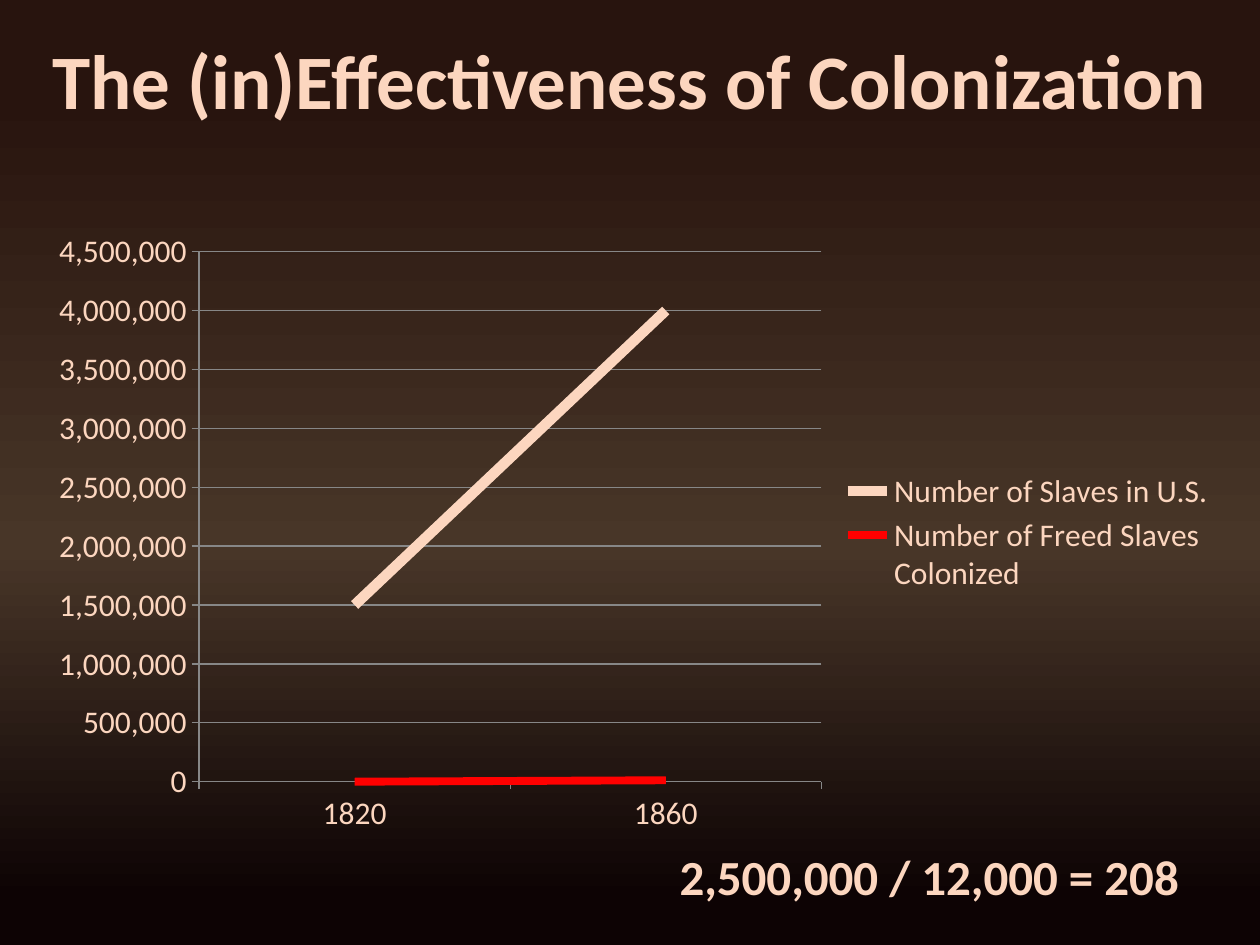
from copy import deepcopy
from dataclasses import dataclass

from lxml import etree
from pptx import Presentation
from pptx.chart.data import CategoryChartData
from pptx.dml.color import RGBColor
from pptx.enum.chart import XL_CHART_TYPE, XL_LEGEND_POSITION, XL_TICK_MARK
from pptx.enum.text import MSO_ANCHOR, MSO_AUTO_SIZE, PP_ALIGN
from pptx.oxml.ns import qn
from pptx.util import Pt

LINE = XL_CHART_TYPE.LINE
LEGEND_RIGHT = XL_LEGEND_POSITION.RIGHT
TICK_OUTSIDE = XL_TICK_MARK.OUTSIDE
MIDDLE = MSO_ANCHOR.MIDDLE
GROW = MSO_AUTO_SIZE.SHAPE_TO_FIT_TEXT
NO_FIT = MSO_AUTO_SIZE.NONE
CENTER = PP_ALIGN.CENTER
TITLE_ONLY = 5


@dataclass(frozen=True)
class Theme:
    font: str = "Calibri"
    text: RGBColor = RGBColor.from_string("FCD6BF")
    accent: RGBColor = RGBColor.from_string("FF0000")
    rule: RGBColor = RGBColor.from_string("878787")
    backdrop: tuple = ((0.10, "28140E"), (0.58, "483628"), (0.95, "0D0304"))
    title_size: int = 44
    result_size: int = 28
    chart_size: int = 18


def assign(target, values):
    for name, value in values.items():
        setattr(target, name, value)


class SlideBuilder:
    def __init__(self, slide, theme):
        self.slide = slide
        self.theme = theme

    def style_font(self, font, size, bold=False):
        assign(font, {"name": self.theme.font, "size": Pt(size), "bold": bold})
        font.color.rgb = self.theme.text

    def style_line(self, line, color, width):
        line.color.rgb = color
        line.width = Pt(width)

    def background(self):
        fill = self.slide.background.fill
        fill.gradient()
        fill.gradient_angle = 270
        stop_list = self.slide.element.find(".//" + qn("a:gsLst"))
        stop_list.insert(1, deepcopy(stop_list[0]))
        for stop, (position, color) in zip(fill.gradient_stops, self.theme.backdrop):
            stop.position = position
            stop.color.rgb = RGBColor.from_string(color)

    def fill_text(self, box, text, size, frame_format):
        frame = box.text_frame
        assign(frame, {"word_wrap": True, **frame_format})
        para = frame.paragraphs[0]
        para.alignment = CENTER
        span = para.add_run()
        span.text = text
        self.style_font(span.font, size, bold=True)

    def title(self, text, left, top, width, height):
        box = self.slide.shapes.title
        assign(box, {"left": Pt(left), "top": Pt(top),
                     "width": Pt(width), "height": Pt(height)})
        self.fill_text(box, text, self.theme.title_size,
                       {"auto_size": NO_FIT, "vertical_anchor": MIDDLE})

    def text(self, text, left, top, width, height):
        box = self.slide.shapes.add_textbox(Pt(left), Pt(top), Pt(width), Pt(height))
        self.fill_text(box, text, self.theme.result_size, {"auto_size": GROW})

    def line_chart(self, categories, series_rows, plot_area, left, top, width, height):
        data = CategoryChartData(number_format="#,##0")
        data.categories = categories
        for name, values, _, _ in series_rows:
            data.add_series(name, values)
        chart = self.slide.shapes.add_chart(
            LINE, Pt(left), Pt(top), Pt(width), Pt(height), data).chart
        assign(chart, {"has_title": False, "has_legend": True})
        assign(chart.legend, {"position": LEGEND_RIGHT, "include_in_layout": False})
        self.style_font(chart.font, self.theme.chart_size)
        for axis in (chart.category_axis, chart.value_axis):
            axis.major_tick_mark = TICK_OUTSIDE
            self.style_line(axis.format.line, self.theme.rule, 0.75)
        value_axis = chart.value_axis
        assign(value_axis, {"minimum_scale": 0, "maximum_scale": 4500000,
                            "major_unit": 500000, "has_major_gridlines": True})
        assign(value_axis.tick_labels,
               {"number_format": "#,##0", "number_format_is_linked": False})
        self.style_line(value_axis.major_gridlines.format.line, self.theme.rule, 0.75)
        chart.plots[0].vary_by_categories = False
        for series, (_, _, color, weight) in zip(chart.plots[0].series, series_rows):
            series.smooth = False
            self.style_line(series.format.line, color, weight)
        self.place_plot(chart, plot_area)

    def place_plot(self, chart, plot_area):
        plot = chart.element.find(".//" + qn("c:plotArea"))
        for old_layout in plot.findall(qn("c:layout")):
            plot.remove(old_layout)
        layout = etree.Element(qn("c:layout"))
        plot.insert(0, layout)
        manual = etree.SubElement(layout, qn("c:manualLayout"))
        settings = {"layoutTarget": "inner", "xMode": "edge", "yMode": "edge", **plot_area}
        for name, value in settings.items():
            etree.SubElement(manual, qn("c:" + name)).set("val", str(value))


def main():
    theme = Theme()
    deck = Presentation()
    assign(deck, {"slide_width": Pt(720), "slide_height": Pt(540)})
    page = SlideBuilder(deck.slides.add_slide(deck.slide_layouts[TITLE_ONLY]), theme)
    page.background()
    page.title("The (in)Effectiveness of Colonization", 0, 0, 720, 90)
    page.line_chart(
        ["1820", "1860"],
        [("Number of Slaves in U.S.", (1500000, 4000000), theme.text, 6),
         ("Number of Freed Slaves Colonized", (0, 12000), theme.accent, 4.5)],
        {"x": 0.14, "y": 0.05, "w": 0.52, "h": 0.85},
        18, 126, 684, 356.4)
    page.text("2,500,000 / 12,000 = 208", 360, 480, 342, 41)
    deck.save("out.pptx")


if __name__ == "__main__":
    main()
